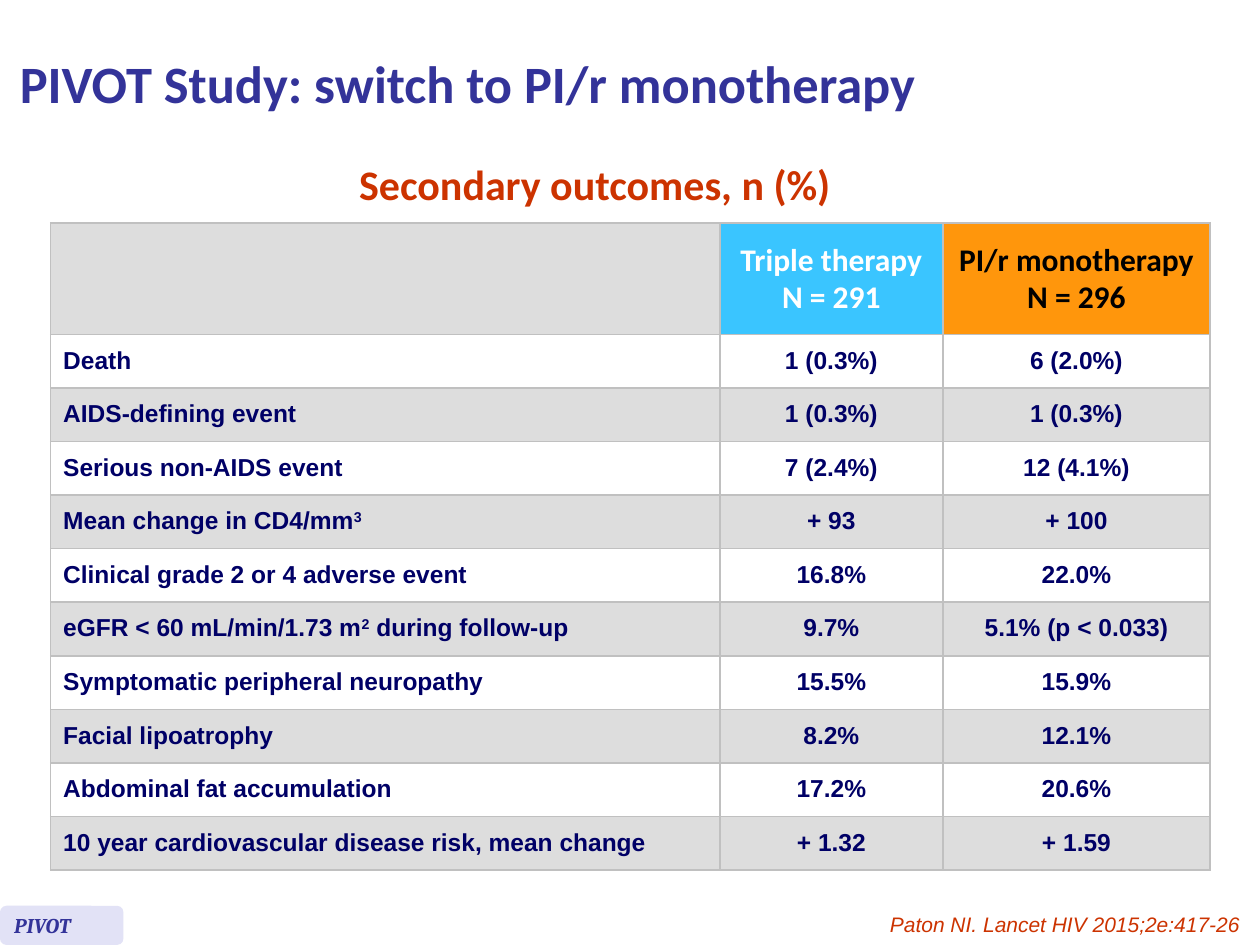
"""Builds the PIVOT secondary outcomes slide."""
from dataclasses import dataclass

from lxml import etree
from pptx import Presentation
from pptx.dml.color import RGBColor
from pptx.enum.shapes import MSO_SHAPE
from pptx.enum.text import MSO_ANCHOR, PP_ALIGN
from pptx.oxml.ns import qn
from pptx.util import Cm, Pt

LEFT, CENTER, RIGHT = PP_ALIGN.LEFT, PP_ALIGN.CENTER, PP_ALIGN.RIGHT
TOP, MIDDLE = MSO_ANCHOR.TOP, MSO_ANCHOR.MIDDLE
ROUNDED = MSO_SHAPE.ROUNDED_RECTANGLE
WHITE, GREY, BORDER = "FFFFFF", "DDDDDD", "C0C0C0"
BLUE, RED = "333399", "CC3300"
COLUMN_WIDTHS = (13.49, 4.5, 5.38)
HEADER_HEIGHT, ROW_HEIGHT = 2.24, 1.08


@dataclass(frozen=True)
class Style:
    size: float
    name: str
    color: str
    bold: bool = True
    italic: bool = False


@dataclass(frozen=True)
class Label:
    text: str
    box: tuple[float, float, float, float]
    style: Style
    align: PP_ALIGN = LEFT
    anchor: MSO_ANCHOR = TOP
    spacing: Pt | float | None = None


@dataclass(frozen=True)
class Header:
    text: str
    fill: str
    color: str


@dataclass(frozen=True)
class Outcome:
    name: str
    triple: str
    mono: str


BODY = Style(14, "Arial", "000066")
LABELS = (
    Label("PIVOT Study: switch to PI/r monotherapy", (0.15, 0.13, 22.76, 3.07),
          Style(30, "Calibri", BLUE), anchor=MIDDLE),
    Label("Secondary outcomes, n (%)", (6.99, 3.56, 11.71, 0.91),
          Style(24, "Calibri", RED), spacing=Pt(15.2)),
    Label("Paton NI. Lancet HIV 2015;2e:417-26", (16.36, 18.26, 8.89, 0.76),
          Style(12, "Arial", RED, False, True), RIGHT),
)
BADGE = Label("PIVOT", (0, 18.26, 2.49, 0.79),
              Style(12, "Cambria", BLUE, True, True), anchor=MIDDLE)
HEADERS = (
    Header("", GREY, "000000"),
    Header("Triple therapy\nN = 291", "3AC5FF", WHITE),
    Header("PI/r monotherapy\nN = 296", "FF960C", "000000"),
)
OUTCOMES = (
    Outcome("Death", "1 (0.3%)", "6 (2.0%)"),
    Outcome("AIDS-defining event", "1 (0.3%)", "1 (0.3%)"),
    Outcome("Serious non-AIDS event", "7 (2.4%)", "12 (4.1%)"),
    Outcome("Mean change in CD4/mm^3", "+ 93", "+ 100"),
    Outcome("Clinical grade 2 or 4 adverse event", "16.8%", "22.0%"),
    Outcome("eGFR < 60 mL/min/1.73 m^2^ during follow-up", "9.7%", "5.1% (p < 0.033)"),
    Outcome("Symptomatic peripheral neuropathy", "15.5%", "15.9%"),
    Outcome("Facial lipoatrophy", "8.2%", "12.1%"),
    Outcome("Abdominal fat accumulation", "17.2%", "20.6%"),
    Outcome("10 year cardiovascular disease risk, mean change", "+ 1.32", "+ 1.59"),
)


def rgb(value: str) -> RGBColor:
    return RGBColor.from_string(value)


def write(tf, text: str, style: Style, align=LEFT, spacing=None) -> None:
    for i, line in enumerate(text.split("\n")):
        p = tf.add_paragraph() if i else tf.paragraphs[0]
        p.alignment = align
        p.line_spacing = spacing
        for k, part in enumerate(line.split("^")):
            r = p.add_run()
            r.text = part
            if k % 2:
                r._r.get_or_add_rPr().set("baseline", "30000")
        font = p.font
        font.size, font.name = Pt(style.size), style.name
        font.bold, font.italic = style.bold, style.italic
        font.color.rgb = rgb(style.color)


def fill_label(sp, label: Label) -> None:
    tf = sp.text_frame
    tf.word_wrap = True
    tf.vertical_anchor = label.anchor
    write(tf, label.text, label.style, label.align, label.spacing)


def add_label(s, label: Label) -> None:
    fill_label(s.shapes.add_textbox(*map(Cm, label.box)), label)


def add_badge(s, label: Label) -> None:
    sp = s.shapes.add_shape(ROUNDED, *map(Cm, label.box))
    sp.shadow.inherit = False
    sp.fill.solid()
    sp.fill.fore_color.rgb = rgb("E2E2F6")
    sp.line.fill.background()
    fill_label(sp, label)


def set_cell(cell, text: str, fill: str, style: Style, align: PP_ALIGN) -> None:
    tc_pr = cell._tc.get_or_add_tcPr()
    for side in ("lnL", "lnR", "lnT", "lnB"):
        ln = etree.SubElement(tc_pr, qn(f"a:{side}"), w=str(Pt(1)))
        solid = etree.SubElement(ln, qn("a:solidFill"))
        etree.SubElement(solid, qn("a:srgbClr"), val=BORDER)
    cell.fill.solid()
    cell.fill.fore_color.rgb = rgb(fill)
    cell.vertical_anchor = MIDDLE
    if text:
        write(cell.text_frame, text, style, align, 0.95)


def add_outcomes(s) -> None:
    height = HEADER_HEIGHT + ROW_HEIGHT * len(OUTCOMES)
    table = s.shapes.add_table(len(OUTCOMES) + 1, len(HEADERS), Cm(1.02), Cm(4.5),
                               Cm(sum(COLUMN_WIDTHS)), Cm(height)).table
    for column, width in zip(table.columns, COLUMN_WIDTHS):
        column.width = Cm(width)
    for i, row in enumerate(table.rows):
        row.height = Cm(ROW_HEIGHT if i else HEADER_HEIGHT)
    for col, head in enumerate(HEADERS):
        set_cell(table.cell(0, col), head.text, head.fill,
                 Style(18, "Calibri", head.color), CENTER)
    for i, item in enumerate(OUTCOMES, 1):
        for col, text in enumerate((item.name, item.triple, item.mono)):
            set_cell(table.cell(i, col), text, WHITE if i % 2 else GREY,
                     BODY, CENTER if col else LEFT)


def main() -> None:
    prs = Presentation()
    prs.slide_width, prs.slide_height = Cm(25.4), Cm(19.05)
    s = prs.slides.add_slide(prs.slide_layouts[6])
    add_outcomes(s)
    add_badge(s, BADGE)
    for label in LABELS:
        add_label(s, label)
    prs.save("out.pptx")


if __name__ == "__main__":
    main()
